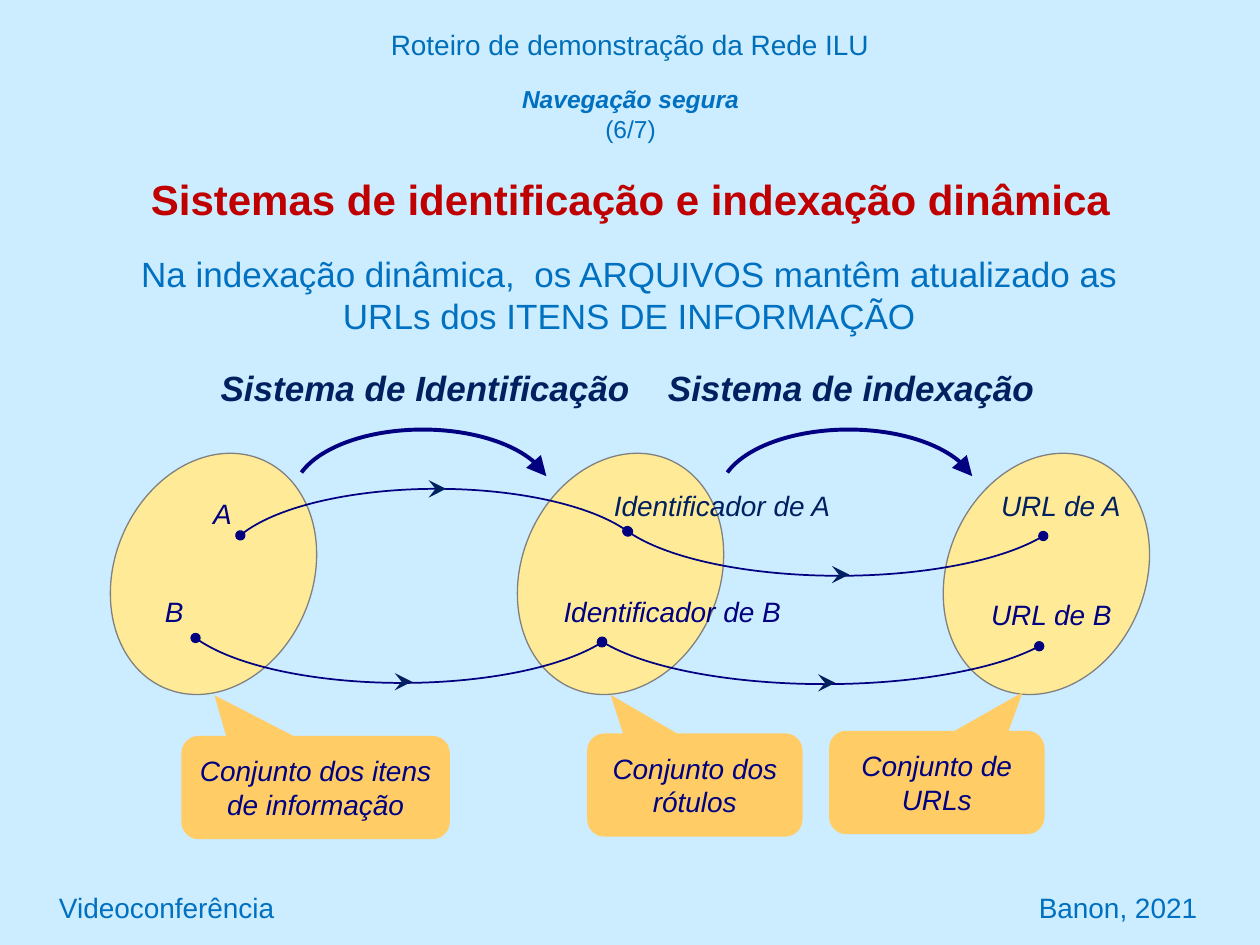
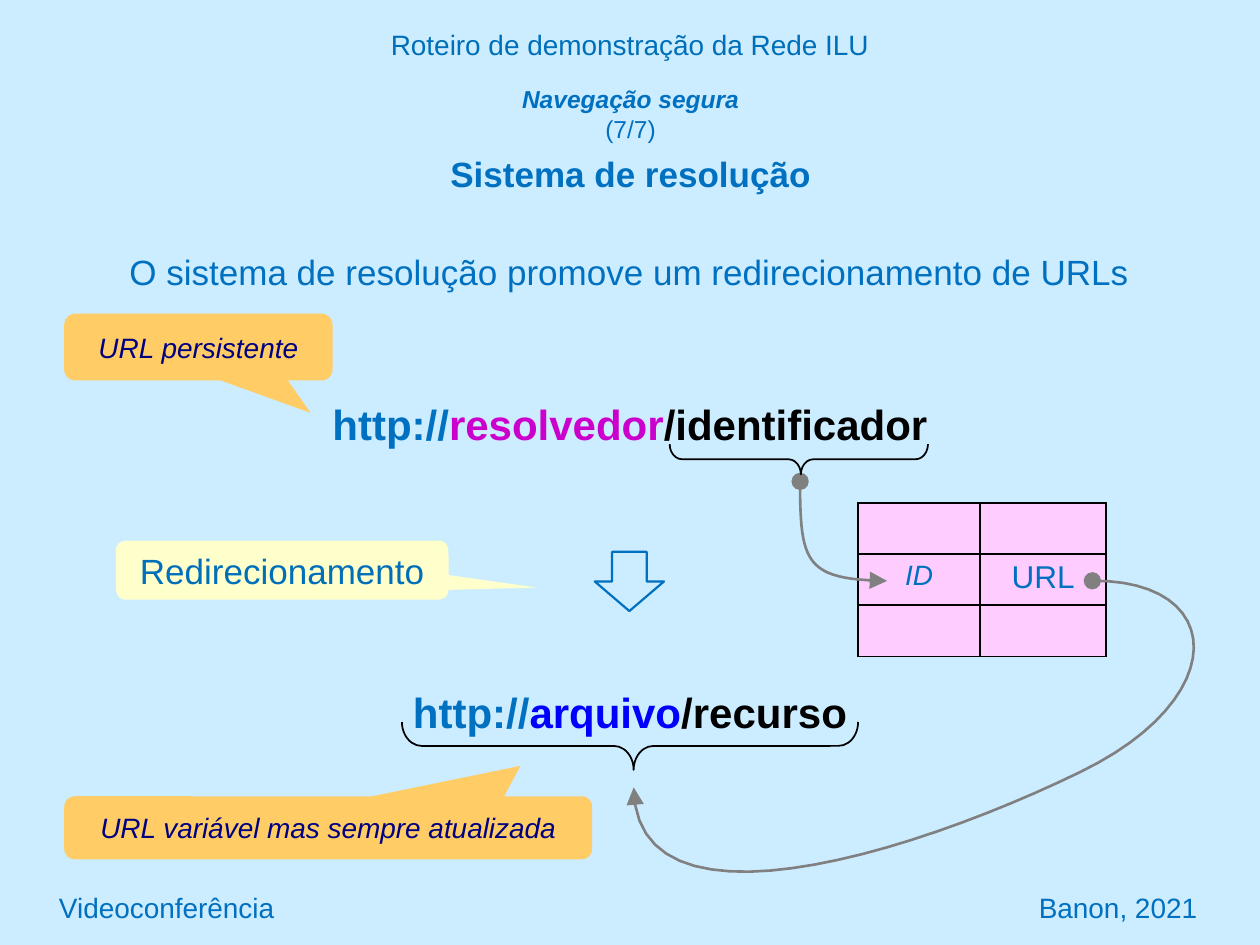
from lxml.etree import SubElement
from pptx import Presentation
from pptx.dml.color import RGBColor
from pptx.enum.shapes import MSO_CONNECTOR, MSO_SHAPE
from pptx.enum.text import MSO_ANCHOR, MSO_AUTO_SIZE, PP_ALIGN
from pptx.oxml.ns import qn
from pptx.util import Inches, Pt

WIDTH, HEIGHT = Inches(10), Inches(7.5)
COLS, ROWS = 100, 75
FONT = "Arial"
C = {
    "sky": "CCECFF", "header": "006FBA", "blue": "0070C0", "red": "C00000",
    "navy": "000080", "ink": "002060", "set": "FFEB97", "gray": "808080",
    "callout": "FFCC66", "note": "FFFFCC", "cell": "FFCCFF",
    "black": "000000", "magenta": "CC00CC", "pure": "0000FF",
}
UPPER = (188.79, 349.71)
LOWER = (360 - UPPER[1], 360 - UPPER[0])
SWEEP = (190.55, 351.31)


def rgb(name):
    return RGBColor.from_string(C[name])


def at(x, y):
    return int(WIDTH * x / COLS), int(HEIGHT * y / ROWS)


def box(x, y, w, h):
    return at(x, y) + at(w, h)


def write(p, runs, size, align=PP_ALIGN.CENTER, before=0, **fmt):
    p.alignment = align
    p.space_before = Pt(before)
    for text, color in runs:
        r = p.add_run()
        r.text = text
        for key, value in {"name": FONT, "size": Pt(size), **fmt}.items():
            setattr(r.font, key, value)
        r.font.color.rgb = rgb(color)


def add_text(s, area, runs, size, wrap=True, **fmt):
    tf = s.shapes.add_textbox(*box(*area)).text_frame
    tf.word_wrap = wrap
    write(tf.paragraphs[0], runs, size, **fmt)


def set_line(sp, color, width, head=None, tail=None, tip="med"):
    sp.line.width = Pt(width)
    sp.line.color.rgb = rgb(color)
    ln = sp.element.spPr.find(qn("a:ln"))
    for tag, kind in (("a:headEnd", head), ("a:tailEnd", tail)):
        if kind:
            SubElement(ln, qn(tag), type=kind, w=tip, len=tip)


def add_shape(s, kind, area, fill=None, adjustments=(), rotation=0):
    sp = s.shapes.add_shape(kind, *box(*area))
    sp.shadow.inherit = False
    sp.rotation = rotation
    for i, value in enumerate(adjustments):
        sp.adjustments[i] = value
    if fill:
        sp.fill.solid()
        sp.fill.fore_color.rgb = rgb(fill)
    else:
        sp.fill.background()
    sp.line.fill.background()
    return sp


def add_arc(s, area, angles, width=1, **ends):
    sp = add_shape(s, MSO_SHAPE.ARC, area, adjustments=[a * 0.6 for a in angles])
    set_line(sp, "navy", width, **ends)


def add_mapping(s, area, angles, arrow):
    add_arc(s, area, angles, head="oval", tail="oval")
    x, y = arrow
    line = s.shapes.add_connector(MSO_CONNECTOR.STRAIGHT, *at(x, y), *at(x + 0.8, y))
    set_line(line, "ink", 0.75, tail="stealth", tip="lg")
    SubElement(line.element.spPr, qn("a:effectLst"))


def add_callout(s, area, pointer, text, fill="callout", color="navy", size=16, italic=True):
    sp = add_shape(s, MSO_SHAPE.ROUNDED_RECTANGULAR_CALLOUT, area, fill, pointer)
    tf = sp.text_frame
    tf.word_wrap = True
    tf.vertical_anchor = MSO_ANCHOR.MIDDLE
    write(tf.paragraphs[0], [(text, color)], size, italic=italic)


def add_brace(s, center, length, depth):
    x, y = center
    area = (x - depth / 2, y - length / 2, depth, length)
    sp = add_shape(s, MSO_SHAPE.LEFT_BRACE, area, adjustments=(0.412, 0.508), rotation=270)
    set_line(sp, "black", 1)


def bezier(a, b, c, d, steps=24):
    for i in range(1, steps + 1):
        t = i / steps
        u = 1 - t
        weights = (u ** 3, 3 * u * u * t, 3 * u * t * t, t ** 3)
        yield tuple(sum(w * q[k] for w, q in zip(weights, (a, b, c, d))) for k in (0, 1))


def add_curve(s, start, *curves):
    points, last = [], start
    for b, c, d in curves:
        points += bezier(last, b, c, d)
        last = d
    builder = s.shapes.build_freeform(*at(*start), scale=1.0)
    builder.add_line_segments([at(*q) for q in points], close=False)
    sp = builder.convert_to_shape()
    sp.shadow.inherit = False
    sp.fill.background()
    set_line(sp, "gray", 1.5, "oval", "triangle", "lg")


def add_lookup_table(s, area, widths, rows):
    t = s.shapes.add_table(len(rows), len(widths), *box(*area)).table
    t.first_row = t.horz_banding = False
    for col, width in zip(t.columns, widths):
        col.width = at(width, 0)[0]
    for i, row in enumerate(rows):
        for j, entry in enumerate(row):
            cell = t.cell(i, j)
            tc_pr = cell._tc.get_or_add_tcPr()
            for side in "LRTB":
                ln = SubElement(tc_pr, qn(f"a:ln{side}"), w=str(Pt(1)))
                fill = SubElement(ln, qn("a:solidFill"))
                SubElement(fill, qn("a:srgbClr"), val=C["black"])
            cell.fill.solid()
            cell.fill.fore_color.rgb = rgb("cell")
            if entry:
                text, size, italic = entry
                write(cell.text_frame.paragraphs[0], [(text, "blue")], size, italic=italic)


def place_placeholder(sp, area):
    sp.left, sp.top, sp.width, sp.height = box(*area)
    tf = sp.text_frame
    tf.word_wrap = True
    tf.auto_size = MSO_AUTO_SIZE.NONE
    tf.vertical_anchor = MSO_ANCHOR.TOP
    return tf


def add_slide(prs, page, title, color, size, gap, statement, body_area):
    s = prs.slides.add_slide(prs.slide_layouts[1])
    tf = place_placeholder(s.shapes.title, (7.5, 6.2, 85.1, 11.2))
    write(tf.paragraphs[0], [("Navegação segura", "blue")], 14, bold=True, italic=True)
    write(tf.add_paragraph(), [(f"({page}/7)", "blue")], 14)
    write(tf.add_paragraph(), [(title, color)], size, before=gap, bold=True)

    p = place_placeholder(s.placeholders[1], body_area).paragraphs[0]
    write(p, [(statement, "blue")], 20)
    p_pr = p._p.get_or_add_pPr()
    p_pr.set("marL", "0")
    p_pr.set("indent", "0")
    SubElement(p_pr, qn("a:buNone"))

    add_text(s, (0, 1.7, 100, 3.7), [("Roteiro de demonstração da Rede ILU", "header")], 16)
    for x, text, align in ((3.7, "Videoconferência", PP_ALIGN.LEFT),
                           (66, "Banon, 2021", PP_ALIGN.RIGHT)):
        add_text(s, (x, 70.2, 30, 3.7), [(text, "blue")], 16, align=align)
    return s


def build_indexing(prs):
    s = add_slide(prs, 6, "Sistemas de identificação e indexação dinâmica", "red", 24, 17,
                  "Na indexação dinâmica,  os ARQUIVOS mantêm atualizado as "
                  "URLs dos ITENS DE INFORMAÇÃO", (9.2, 19.5, 81.5, 7.7))
    for x in (9.1, 41.4, 75.2):
        sp = add_shape(s, MSO_SHAPE.OVAL, (x, 35.7, 15.7, 19.7), "set", rotation=23)
        set_line(sp, "gray", 0.75)
    for x in (23.3, 57.1):
        add_arc(s, (x, 34.1, 20.5, 10.4), SWEEP, 2.25, tail="triangle", tip="lg")
    for area, angles, arrow in (
        ((17.7, 38.8, 33.9, 12.2), UPPER, (34.6, 38.8)),
        ((13.9, 42, 36, 12.2), LOWER, (31.9, 54.1)),
        ((48.1, 33.5, 37, 12.2), LOWER, (66.6, 45.6)),
        ((45.7, 42.1, 39.5, 12.2), LOWER, (65.5, 54.2)),
    ):
        add_mapping(s, area, angles, arrow)
    for area, pointer, text in (
        ((14.4, 58.4, 21.3, 8.2), (-0.377, -0.894), "Conjunto dos itens de informação"),
        ((46.6, 58.2, 17.1, 8.2), (-0.391, -0.873), "Conjunto dos rótulos"),
        ((65.8, 58, 17.1, 8.2), (0.398, -0.873), "Conjunto de URLs"),
    ):
        add_callout(s, area, pointer, text)
    for x, y, w, text, color in (
        (15.9, 38.9, 3.5, "A", "navy"),
        (12.1, 46.7, 3.4, "B", "navy"),
        (47.3, 38.3, 20, "Identificador de A", "ink"),
        (43.6, 46.7, 19.5, "Identificador de B", "navy"),
        (78.4, 38.3, 11.6, "URL de A", "ink"),
        (77.6, 46.9, 11.7, "URL de B", "navy"),
    ):
        add_text(s, (x, y, w, 3.7), [(text, color)], 16, wrap=False, italic=True)
    for x, w, text in ((16.4, 34.7, "Sistema de Identificação"),
                       (51.9, 31.3, "Sistema de indexação")):
        add_text(s, (x, 28.6, w, 4.4), [(text, "ink")], 20, wrap=False, bold=True, italic=True)


def build_resolution(prs):
    s = add_slide(prs, 7, "Sistema de resolução", "blue", 20, 5,
                  "O sistema de resolução promove um redirecionamento de URLs",
                  (9.2, 19.4, 81.5, 4.4))
    for y, host, color, tail in ((54, "arquivo", "pure", "/recurso"),
                                 (31.1, "resolvedor", "magenta", "/identificador")):
        runs = [("http://", "blue"), (host, color), (tail, "black")]
        add_text(s, (25, y, 50, 5), runs, 24, bold=True)
    add_callout(s, (5.1, 24.9, 21.3, 5.3), (0.418, 0.985), "URL persistente")
    add_callout(s, (5.1, 63.2, 41.9, 5), (0.364, -0.983), "URL variável mas sempre atualizada")
    add_callout(s, (9.2, 42.9, 26.4, 4.7), (0.766, 0.295), "Redirecionamento",
                "note", "header", 20, False)
    arrow = add_shape(s, MSO_SHAPE.DOWN_ARROW, (47.2, 43.8, 5.5, 4.7))
    set_line(arrow, "blue", 1.25)
    add_lookup_table(s, (68.1, 39.9, 19.7, 12.2), (9.7, 10), [
        (None, None),
        (("ID", 16, True), ("URL", 18, False)),
        (None, None),
    ])
    add_curve(s, (63.5, 38.2), ((63.5, 44.7), (63.9, 46), (70.4, 46.1)))
    add_curve(s, (86.7, 46.1),
              ((97.3, 46), (97.9, 55.4), (85.7, 61.3)),
              ((71.9, 68), (50.4, 74.5), (50.3, 62.5)))
    add_brace(s, (50, 59.2), 36.2, 3.8)
    add_brace(s, (63.4, 36.45), 20.5, 2.4)


def main():
    prs = Presentation()
    prs.slide_width, prs.slide_height = WIDTH, HEIGHT
    fill = prs.slide_master.background.fill
    fill.solid()
    fill.fore_color.rgb = rgb("sky")
    build_indexing(prs)
    build_resolution(prs)
    prs.save("out.pptx")


if __name__ == "__main__":
    main()
